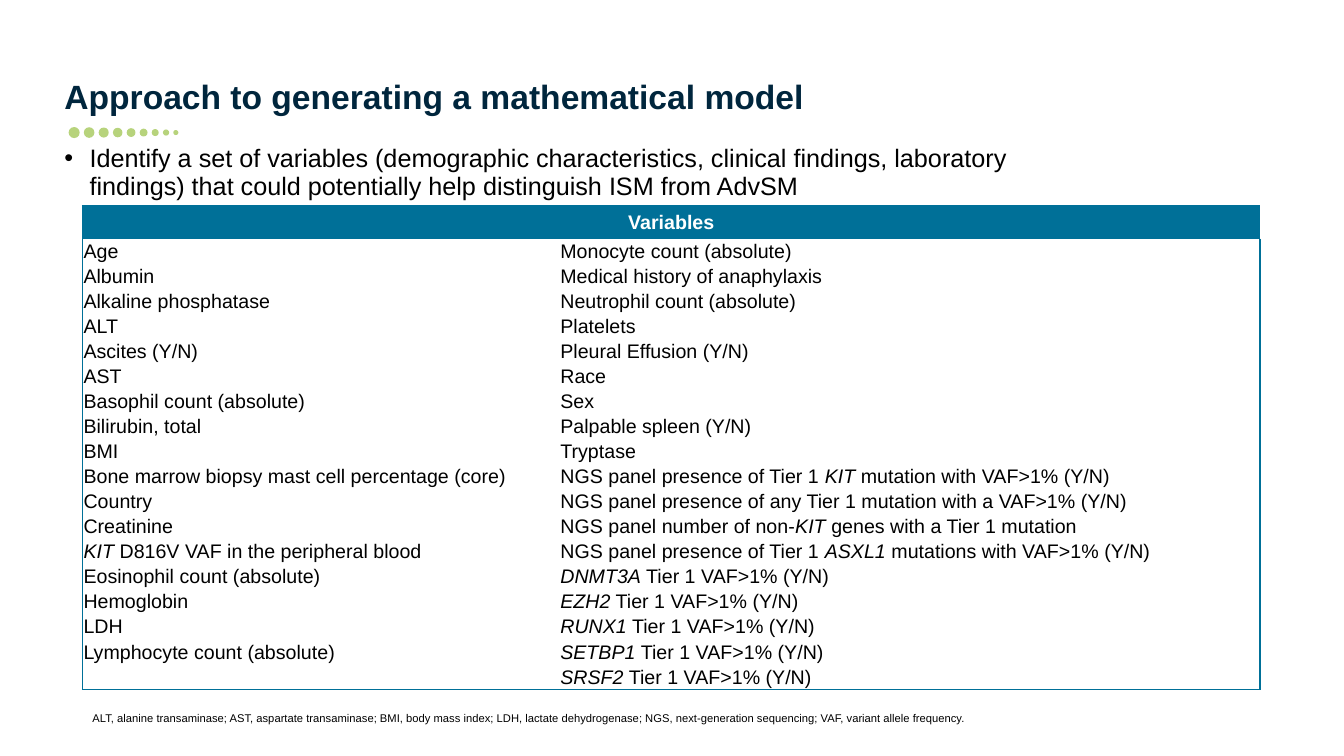
from itertools import zip_longest

from lxml.etree import SubElement
from pptx import Presentation
from pptx.dml.color import RGBColor
from pptx.enum.shapes import MSO_SHAPE
from pptx.enum.text import MSO_ANCHOR, MSO_AUTO_SIZE, PP_ALIGN
from pptx.oxml.ns import qn
from pptx.util import Pt

COLOURS = {
    "navy": "00263D",
    "teal": "007098",
    "green": "B7D37C",
    "black": "000000",
    "white": "FFFFFF",
}
NO_STYLE = "{2D5ABB26-0587-4C30-8999-92F81FD0307C}"

LEFT_VARIABLES = [
    "Age",
    "Albumin",
    "Alkaline phosphatase",
    "ALT",
    "Ascites (Y/N)",
    "AST",
    "Basophil count (absolute)",
    "Bilirubin, total",
    "BMI",
    "Bone marrow biopsy mast cell percentage (core)",
    "Country",
    "Creatinine",
    "*KIT* D816V VAF in the peripheral blood",
    "Eosinophil count (absolute)",
    "Hemoglobin",
    "LDH",
    "Lymphocyte count (absolute)",
]
RIGHT_VARIABLES = [
    "Monocyte count (absolute)",
    "Medical history of anaphylaxis",
    "Neutrophil count (absolute)",
    "Platelets",
    "Pleural Effusion (Y/N)",
    "Race",
    "Sex",
    "Palpable spleen (Y/N)",
    "Tryptase",
    "NGS panel presence of Tier 1 *KIT* mutation with VAF>1% (Y/N)",
    "NGS panel presence of any Tier 1 mutation with a VAF>1% (Y/N)",
    "NGS panel number of non-*KIT* genes with a Tier 1 mutation",
    "NGS panel presence of Tier 1 *ASXL1* mutations with VAF>1% (Y/N)",
    *(f"*{gene}* Tier 1 VAF>1% (Y/N)"
      for gene in ("DNMT3A", "EZH2", "RUNX1", "SETBP1", "SRSF2")),
]


class SlideBuilder:
    """Holds the text style and the current slide, and adds elements to it."""

    def __init__(self, slide, font="Arial"):
        self.slide = slide
        self.font = font

    def add_runs(self, paragraph, text, size, colour="black", bold=False):
        """Add runs to a paragraph, with parts between asterisks in italics."""
        for position, part in enumerate(text.split("*")):
            if part:
                run = paragraph.add_run()
                run.text = part
                run.font.name = self.font
                run.font.size = Pt(size)
                run.font.bold = bold
                run.font.italic = position % 2 == 1
                run.font.color.rgb = RGBColor.from_string(COLOURS[colour])

    def frame(self, shape, box, insets, anchor):
        """Place a text shape and return its only paragraph."""
        shape.left, shape.top, shape.width, shape.height = map(Pt, box)
        text = shape.text_frame
        text.word_wrap = True
        text.auto_size = MSO_AUTO_SIZE.NONE
        text.vertical_anchor = anchor
        (text.margin_left, text.margin_top,
         text.margin_right, text.margin_bottom) = map(Pt, insets)
        paragraph = text.paragraphs[0]
        paragraph.alignment = PP_ALIGN.LEFT
        return paragraph

    def title(self, text, box):
        """Fill the title placeholder."""
        paragraph = self.frame(self.slide.shapes.title, box,
                               (0, 3.6, 7.2, 5.8), MSO_ANCHOR.BOTTOM)
        paragraph.line_spacing = 0.9
        self.add_runs(paragraph, text, 24, "navy", bold=True)

    def bullet(self, text, box):
        """Add one bulleted statement."""
        shape = self.slide.shapes.add_textbox(0, 0, 0, 0)
        paragraph = self.frame(shape, box, (0, 0, 0, 0), MSO_ANCHOR.BOTTOM)
        paragraph.line_spacing = 0.9
        properties = paragraph._p.get_or_add_pPr()
        properties.set("marL", str(Pt(18)))
        properties.set("indent", str(-Pt(18)))
        SubElement(properties, qn("a:buFont"), typeface=self.font)
        SubElement(properties, qn("a:buChar"), char="•")
        self.add_runs(paragraph, text, 18)

    def footnote(self, text, box):
        """Add the small line of abbreviations."""
        shape = self.slide.shapes.add_textbox(0, 0, 0, 0)
        paragraph = self.frame(shape, box, (7.2, 3.6, 7.2, 3.6), MSO_ANCHOR.TOP)
        self.add_runs(paragraph, text, 8)

    def dots(self, left, middle, sizes, gap):
        """Add a row of shrinking dots centred on one height."""
        for size in sizes:
            dot = self.slide.shapes.add_shape(
                MSO_SHAPE.OVAL, Pt(left), Pt(middle - size / 2), Pt(size), Pt(size))
            dot.shadow.inherit = False
            dot.fill.solid()
            dot.fill.fore_color.rgb = RGBColor.from_string(COLOURS["green"])
            dot.line.fill.background()
            left += size + gap

    def border(self, cell, sides):
        """Draw thin teal lines on the given sides of a cell."""
        for side in sides:
            line = SubElement(cell._tc.get_or_add_tcPr(), qn(f"a:ln{side}"),
                              w=str(Pt(1)))
            fill = SubElement(line, qn("a:solidFill"))
            SubElement(fill, qn("a:srgbClr"), val=COLOURS["teal"])

    def table(self, heading, rows, box, widths, heights):
        """Add an outlined table with one heading across all columns."""
        grid = self.slide.shapes.add_table(
            len(rows) + 1, len(widths), *map(Pt, box)).table
        grid._tbl.tblPr.find(qn("a:tableStyleId")).text = NO_STYLE
        grid.first_row = grid.horz_banding = False
        for column, width in zip(grid.columns, widths):
            column.width = Pt(width)
        grid.cell(0, 0).merge(grid.cell(0, len(widths) - 1))
        for r, texts in enumerate([(heading, ""), *rows]):
            grid.rows[r].height = Pt(heights[min(r, 1)])
            for c, text in enumerate(texts):
                cell = grid.cell(r, c)
                cell.margin_left = cell.margin_top = cell.margin_right = Pt(0.7)
                cell.margin_bottom = 0
                cell.vertical_anchor = MSO_ANCHOR.MIDDLE
                sides = "LR"[c] + ("T" if r == 0 else "B" if r == len(rows) else "")
                self.border(cell, sides)
                paragraph = cell.text_frame.paragraphs[0]
                if r == 0:
                    cell.fill.solid()
                    cell.fill.fore_color.rgb = RGBColor.from_string(COLOURS["teal"])
                    paragraph.alignment = PP_ALIGN.CENTER
                    self.add_runs(paragraph, text, 14, "white", bold=True)
                else:
                    cell.fill.background()
                    self.add_runs(paragraph, text, 14)
                if not text:
                    SubElement(paragraph._p, qn("a:endParaRPr"), sz="1400")


def main():
    """Build the slide and save it."""
    deck = Presentation()
    deck.slide_width, deck.slide_height = Pt(960), Pt(540)
    builder = SlideBuilder(deck.slides.add_slide(deck.slide_layouts[5]))

    builder.title("Approach to generating a mathematical model", (46, 36.7, 780.5, 52.6))
    builder.dots(49, 94.7, (7.9, 7.6, 7.2, 6.8, 6.3, 5.6, 5, 4.4, 3.6), 3)
    builder.table("Variables",
                  list(zip_longest(LEFT_VARIABLES, RIGHT_VARIABLES, fillvalue="")),
                  (59, 147, 841, 345.6), (340.6, 500.4), (23.4, 17.9))
    builder.footnote(
        "ALT, alanine transaminase; AST, aspartate transaminase; BMI, body mass index; "
        "LDH, lactate dehydrogenase; NGS, next-generation sequencing; "
        "VAF, variant allele frequency.", (59, 504.7, 900, 17))
    builder.bullet(
        "Identify a set of variables (demographic characteristics, clinical findings, "
        "laboratory findings) that could potentially help distinguish ISM from AdvSM",
        (46, 104, 704, 39.3))
    deck.save("out.pptx")


if __name__ == "__main__":
    main()
